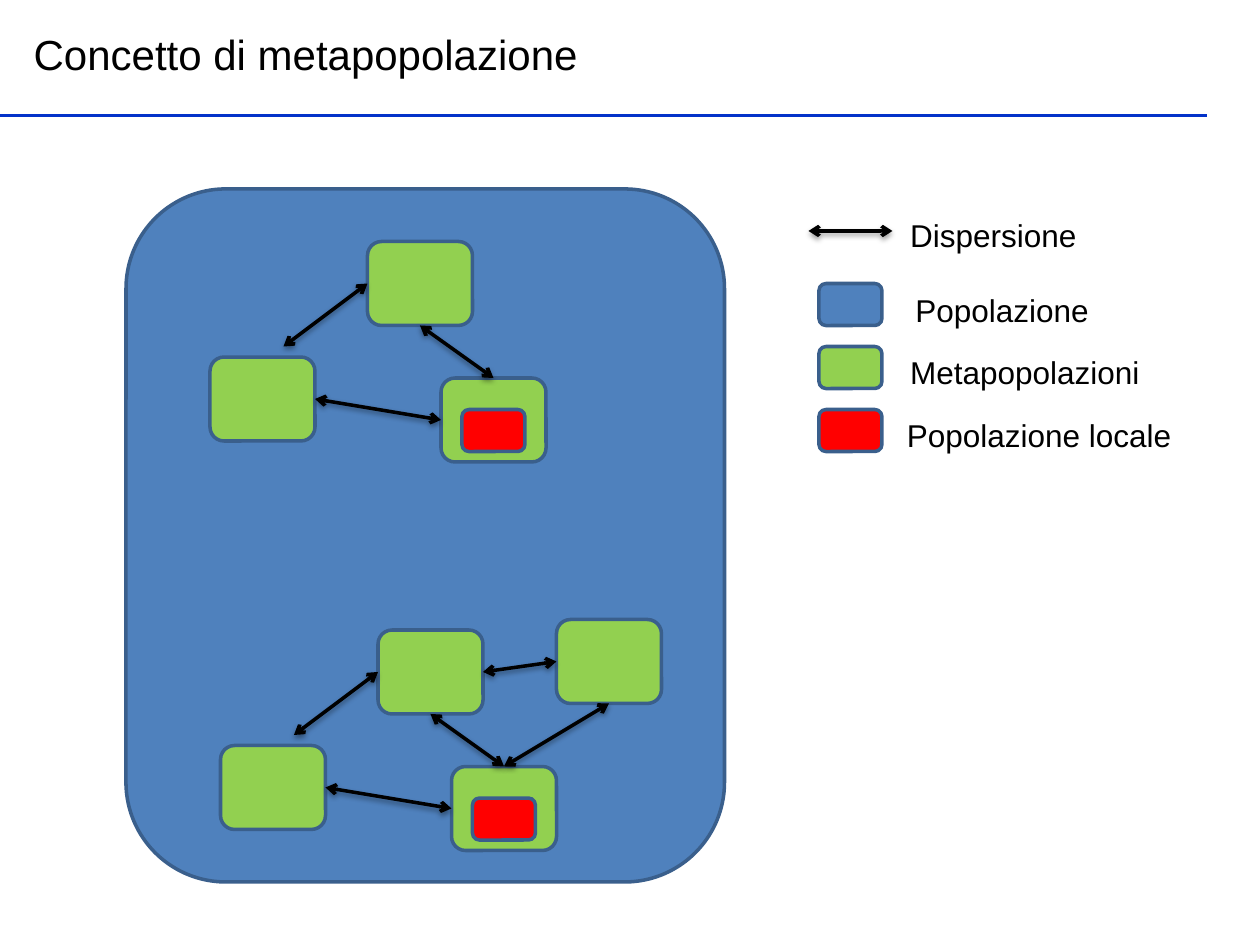
import dataclasses
import typing

import pptx
import pptx.dml.color
import pptx.enum.shapes
import pptx.enum.text
import pptx.oxml
import pptx.oxml.ns
import pptx.util

COLUMNS, ROWS = 120, 90
SLIDE_WIDTH, SLIDE_HEIGHT = pptx.util.Inches(10), pptx.util.Inches(7.5)
TOP, LEFT, BOTTOM, RIGHT = range(4)
PATCH_SIZE = (10, 8)
SMALL_SIZE = (6, 4)
LABEL_HEIGHT = 4.8
COLORS = {
    "population": "4F81BD",
    "metapopulation": "92D050",
    "local": "FF0000",
    "outline": "3A5F8C",
    "rule": "0332C9",
    "ink": "000000",
}
SHADOW = (
    '<a:outerShdw blurRad="39370" dist="20320" dir="5400000" rotWithShape="0">'
    '<a:srgbClr val="000000"><a:alpha val="38000"/></a:srgbClr></a:outerShdw>'
)


class Point(typing.NamedTuple):
    column: float
    row: float


@dataclasses.dataclass(frozen=True)
class LegendEntry:
    text: str
    label: Point
    width: float
    swatch: typing.Optional[str] = None


@dataclasses.dataclass(frozen=True)
class Cluster:
    """Three patches and a loose arrow end, shifted together by an offset."""

    offset: Point
    left: Point = Point(20, 34)
    right: Point = Point(42, 36)
    top: Point = Point(35, 23)
    local: Point = Point(44, 39)
    loose_end: Point = Point(27, 33)

    def place(self, point: Point) -> Point:
        return Point(point.column + self.offset.column, point.row + self.offset.row)


CLUSTERS = [Cluster(Point(0, 0)), Cluster(Point(1, 37))]
EXTRA_PATCH = Point(53, 59)
LEGEND = [
    LegendEntry("Dispersione", Point(85.5, 20), 18.4),
    LegendEntry("Popolazione", Point(86, 27.1), 19.1, "population"),
    LegendEntry("Metapopolazioni", Point(85.5, 33), 24.5, "metapopulation"),
    LegendEntry("Popolazione locale", Point(85.2, 39), 28.8, "local"),
]


def across(columns: float) -> int:
    return round(SLIDE_WIDTH * columns / COLUMNS)


def down(rows: float) -> int:
    return round(SLIDE_HEIGHT * rows / ROWS)


def rgb(name: str) -> pptx.dml.color.RGBColor:
    return pptx.dml.color.RGBColor.from_string(COLORS[name])


def format_text(frame, size: float) -> None:
    frame.auto_size = pptx.enum.text.MSO_AUTO_SIZE.SHAPE_TO_FIT_TEXT
    paragraph = frame.paragraphs[0]
    paragraph.alignment = pptx.enum.text.PP_ALIGN.LEFT
    paragraph.font.name = "Arial"
    paragraph.font.size = pptx.util.Pt(size)
    paragraph.font.color.rgb = rgb("ink")


def add_box(slide, position: Point, size: typing.Tuple[float, float], color: str):
    shape = slide.shapes.add_shape(
        pptx.enum.shapes.MSO_SHAPE.ROUNDED_RECTANGLE,
        across(position.column), down(position.row), across(size[0]), down(size[1]),
    )
    shape.shadow.inherit = False
    shape.fill.solid()
    shape.fill.fore_color.rgb = rgb(color)
    shape.line.color.rgb = rgb("outline")
    shape.line.width = pptx.util.Pt(2)
    return shape


def add_line(slide, start: Point, end: Point, color: str, effects: str = ""):
    connector = slide.shapes.add_connector(
        pptx.enum.shapes.MSO_CONNECTOR.STRAIGHT,
        across(start.column), down(start.row), across(end.column), down(end.row),
    )
    connector.line.color.rgb = rgb(color)
    connector.line.width = pptx.util.Pt(2)
    namespace = pptx.oxml.ns.nsdecls("a")
    connector._element.spPr.append(
        pptx.oxml.parse_xml(f"<a:effectLst {namespace}>{effects}</a:effectLst>")
    )
    return connector


def add_arrow(slide, start: Point, end: Point):
    """Draw a shadowed line with an open arrowhead at both ends."""
    connector = add_line(slide, start, end, "ink", SHADOW)
    line = connector.line._get_or_add_ln()
    namespace = pptx.oxml.ns.nsdecls("a")
    for tag in ("headEnd", "tailEnd"):
        line.append(pptx.oxml.parse_xml(f'<a:{tag} {namespace} type="arrow"/>'))
    return connector


def join(slide, first, first_side: int, second, second_side: int) -> None:
    connector = add_arrow(slide, Point(0, 0), Point(1, 1))
    connector.begin_connect(first, first_side)
    connector.end_connect(second, second_side)


def add_cluster(slide, cluster: Cluster):
    """Draw one cluster and return its top and right patches."""
    left, right, top = (
        add_box(slide, cluster.place(position), PATCH_SIZE, "metapopulation")
        for position in (cluster.left, cluster.right, cluster.top)
    )
    add_box(slide, cluster.place(cluster.local), SMALL_SIZE, "local")
    loose_end = cluster.place(cluster.loose_end)
    add_arrow(slide, loose_end, cluster.place(cluster.top)).end_connect(top, LEFT)
    join(slide, left, RIGHT, right, LEFT)
    join(slide, top, BOTTOM, right, TOP)
    return top, right


def add_legend_entry(slide, entry: LegendEntry) -> None:
    if entry.swatch:
        swatch_row = round(entry.label.row)
        add_box(slide, Point(78, swatch_row), SMALL_SIZE, entry.swatch)
    else:
        add_arrow(slide, Point(77, 22), Point(85, 22))
    label = slide.shapes.add_textbox(
        across(entry.label.column), down(entry.label.row),
        across(entry.width), down(LABEL_HEIGHT),
    )
    label.text_frame.text = entry.text
    label.text_frame.word_wrap = False
    format_text(label.text_frame, 18)


def add_title(slide, text: str) -> None:
    title = slide.shapes.title
    title.left, title.top = across(2), down(2.16)
    title.width, title.height = across(102), down(6)
    title.text_frame.text = text
    title.text_frame.vertical_anchor = pptx.enum.text.MSO_ANCHOR.MIDDLE
    format_text(title.text_frame, 24)


def main() -> None:
    presentation = pptx.Presentation()
    presentation.slide_width, presentation.slide_height = SLIDE_WIDTH, SLIDE_HEIGHT
    slide = presentation.slides.add_slide(presentation.slide_layouts[5])

    add_line(slide, Point(0, 11), Point(115, 11), "rule")
    add_title(slide, "Concetto di metapopolazione")
    add_box(slide, Point(12, 18), (57, 66), "population")

    upper, lower = CLUSTERS
    add_cluster(slide, upper)
    top, right = add_cluster(slide, lower)
    extra = add_box(slide, EXTRA_PATCH, PATCH_SIZE, "metapopulation")
    join(slide, extra, BOTTOM, right, TOP)
    join(slide, top, RIGHT, extra, LEFT)

    for entry in LEGEND:
        add_legend_entry(slide, entry)
    presentation.save("out.pptx")


if __name__ == "__main__":
    main()
